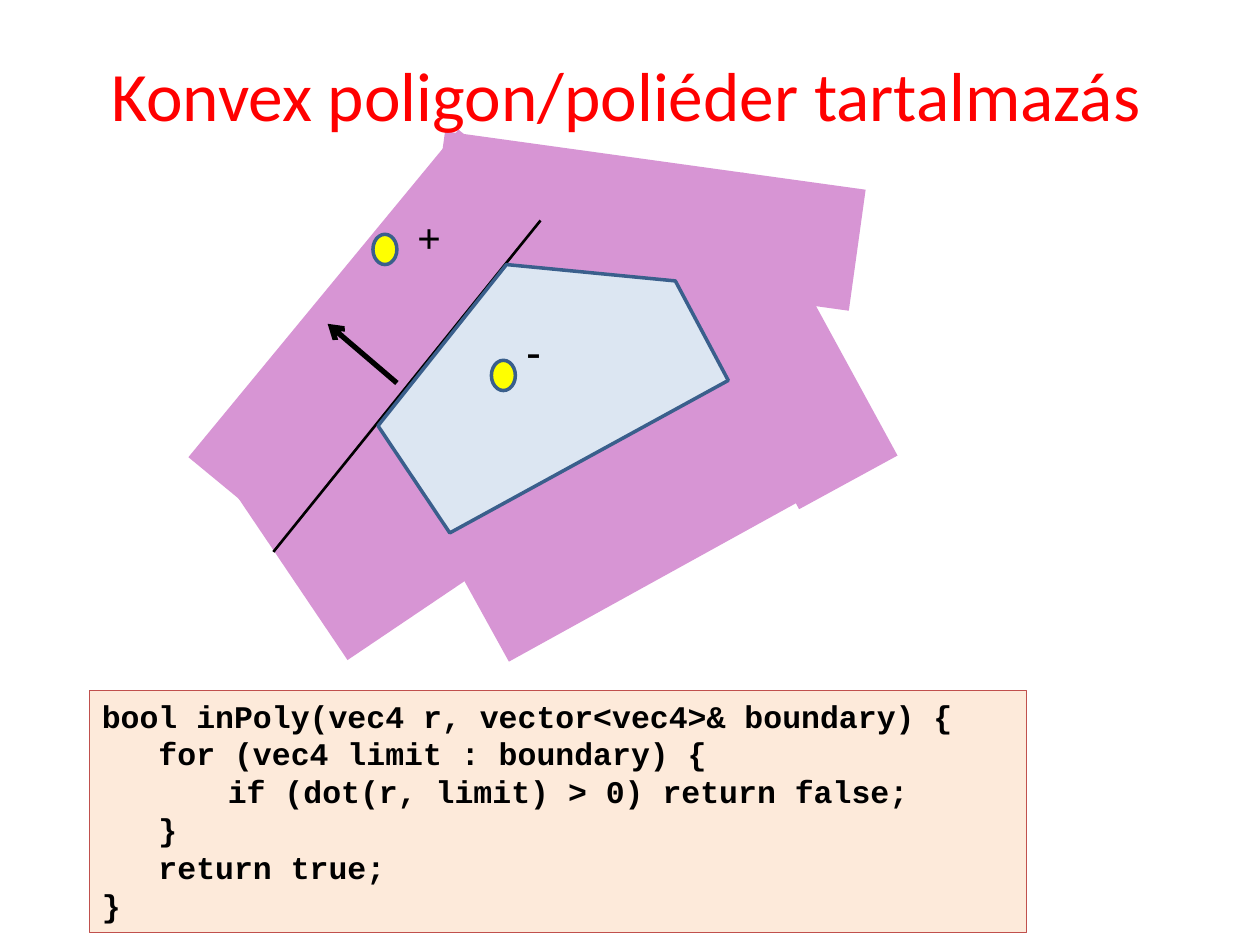
from lxml import etree
from pptx import Presentation
from pptx.dml.color import RGBColor
from pptx.enum.shapes import MSO_CONNECTOR, MSO_SHAPE
from pptx.enum.text import MSO_ANCHOR, MSO_AUTO_SIZE, PP_ALIGN
from pptx.oxml.ns import qn
from pptx.util import Inches, Pt

RECT, OVAL = MSO_SHAPE.RECTANGLE, MSO_SHAPE.OVAL
STRAIGHT = MSO_CONNECTOR.STRAIGHT
MIDDLE = MSO_ANCHOR.MIDDLE
TOP = MSO_ANCHOR.TOP
NO_FIT = MSO_AUTO_SIZE.NONE
LEFT, CENTER = PP_ALIGN.LEFT, PP_ALIGN.CENTER
TITLE_ONLY = 5

COLORS = {
    "title": "FF0000",
    "text": "000000",
    "half_plane": "D795D4",
    "polygon": "DCE6F2",
    "outline": "3A5F8C",
    "point": "FFFF00",
    "code": "FDEADA",
    "code_border": "C0504D",
}

# left, top, width, height, rotation: one strip outside each polygon edge
HALF_PLANES = [
    (3.59, 3.51, 2.9, 1.11, 151.1),
    (1.67, 3.43, 2.05, 1.23, 236),
    (4.84, 2.26, 2.56, 0.89, 61.4),
    (3.45, 1.27, 3.37, 0.97, 7.9),
    (1.26, 2.15, 3.37, 0.98, 309.5),
]
POLYGON = [(3, 3.38), (4.02, 2.1), (5.36, 2.23), (5.78, 3.02), (3.57, 4.23)]
POINTS = [(2.96, 1.86), (3.9, 2.86)]
SIGNS = [("+", 3.21, 1.63, 0.39), ("-", 4.08, 2.53, 0.31)]

# indent in inches, code line
CODE = [
    (0, "bool inPoly(vec4 r, vector<vec4>& boundary) {"),
    (0.45, "for (vec4 limit : boundary) {"),
    (1, "if (dot(r, limit) > 0) return false;"),
    (0.45, "}"),
    (0.45, "return true;"),
    (0, "}"),
]


def rgb(name):
    return RGBColor.from_string(COLORS[name])


class SlideBuilder:
    def __init__(self, slide):
        self.s = slide

    def paint(self, sp, fill, line=None, width=2):
        sp.shadow.inherit = False
        sp.fill.solid()
        sp.fill.fore_color.rgb = rgb(fill)
        if line:
            sp.line.color.rgb = rgb(line)
            sp.line.width = Pt(width)
        else:
            sp.line.fill.background()

    def format_text(self, p, font, size, color="text", bold=False, align=LEFT):
        p.alignment = align
        for r in p.runs:
            r.font.name = font
            r.font.size = Pt(size)
            r.font.bold = bold
            r.font.color.rgb = rgb(color)

    def title(self, text):
        """Fill the title and bring it in front of what is drawn so far."""
        sp = self.s.shapes.title
        sp.left, sp.top = Inches(0.47), Inches(0.12)
        sp.width, sp.height = Inches(9), Inches(1.25)
        tf = sp.text_frame
        tf.text = text
        tf.auto_size = NO_FIT
        tf.vertical_anchor = MIDDLE
        self.format_text(tf.paragraphs[0], "Calibri", 39.6, "title", align=CENTER)
        sp.element.getparent().append(sp.element)

    def shape(self, kind, box, fill, line=None, width=2, rotation=0):
        sp = self.s.shapes.add_shape(kind, *map(Inches, box))
        sp.rotation = rotation
        self.paint(sp, fill, line, width)
        return sp

    def polygon(self, corners, fill, line):
        start, *rest = [(Inches(x), Inches(y)) for x, y in corners]
        builder = self.s.shapes.build_freeform(*start)
        builder.add_line_segments(rest, close=True)
        self.paint(builder.convert_to_shape(), fill, line)

    def line(self, start, end, width, arrow=False):
        sp = self.s.shapes.add_connector(STRAIGHT, *map(Inches, start + end))
        sp.line.color.rgb = rgb("text")
        sp.line.width = Pt(width)
        if arrow:
            etree.SubElement(sp.line._get_or_add_ln(), qn("a:tailEnd"), type="arrow")
        etree.SubElement(sp.element.spPr, qn("a:effectLst"))

    def sign(self, text, left, top, width):
        box = map(Inches, (left, top, width, 0.5))
        tf = self.s.shapes.add_textbox(*box).text_frame
        tf.text = text
        tf.word_wrap = False
        self.format_text(tf.paragraphs[0], "Times New Roman", 24, bold=True, align=CENTER)

    def code(self, box, lines):
        tf = self.shape(RECT, box, "code", "code_border", 0.75).text_frame
        tf.word_wrap = True
        tf.vertical_anchor = TOP
        tf.text = "\n".join(text for _, text in lines)
        for p, (indent, _) in zip(tf.paragraphs, lines):
            self.format_text(p, "Courier New", 18, bold=True)
            p._p.get_or_add_pPr().set("marL", str(Inches(indent)))


def main():
    prs = Presentation()
    prs.slide_width, prs.slide_height = Inches(10), Inches(7.5)
    s = SlideBuilder(prs.slides.add_slide(prs.slide_layouts[TITLE_ONLY]))

    for *box, rotation in HALF_PLANES:
        s.shape(RECT, box, "half_plane", rotation=rotation)
    s.title("Konvex poligon/poliéder tartalmazás")
    s.line((4.29, 1.75), (2.17, 4.38), 1.5)
    s.polygon(POLYGON, "polygon", "outline")
    s.line((3.15, 3.04), (2.6, 2.57), 3, arrow=True)
    s.code((0.71, 5.48, 7.44, 1.92), CODE)
    for left, top in POINTS:
        s.shape(OVAL, (left, top, 0.19, 0.24), "point", "outline")
    for sign in SIGNS:
        s.sign(*sign)

    prs.save("out.pptx")


if __name__ == "__main__":
    main()
